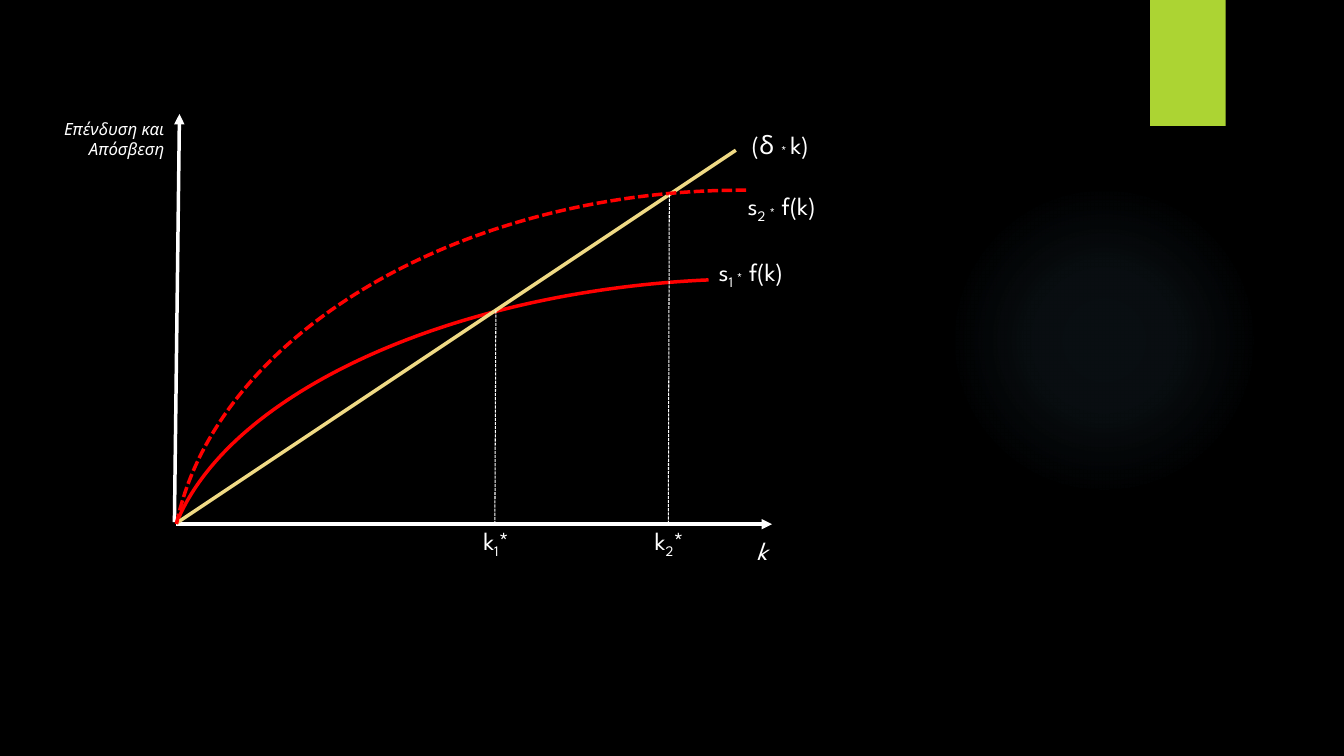
import lxml.etree
import pptx
import pptx.dml.color
import pptx.enum.dml
import pptx.enum.shapes
import pptx.enum.text
import pptx.oxml
import pptx.oxml.ns
import pptx.util

Pt = pptx.util.Pt
RGB = pptx.dml.color.RGBColor.from_string
SHAPE = pptx.enum.shapes.MSO_SHAPE
ALIGN = pptx.enum.text.PP_ALIGN
DASH = pptx.enum.dml.MSO_LINE.SQUARE_DOT
NS = pptx.oxml.ns.nsdecls("a")


class Theme:
    font = "League Spartan"
    background, text, accent, glow = "000000", "FFFFFF", "ACD433", "7AC4F0"
    saving, depreciation = "FF0000", "F0DA85"
    label_size, axis_size = 18, 12
    heavy, thin = 2.5, 0.75


# Content: runs are (text, baseline in percent); boxes are left, top, width, height
SUB, STAR = -25, -10
LABELS = [
    ([("Επένδυση και Απόσβεση", 0)], (17.3, 81.4, 107.3, 36),
     dict(size=Theme.axis_size, align=ALIGN.RIGHT, italic=True)),
    ([("k", 0)], (518.4, 378.7, 36.7, 28.8), dict(align=ALIGN.RIGHT, italic=True)),
    ([("(δ ", 0), ("* ", STAR), ("k) ", 0)], (520.6, 77.8, 77.8, 36),
     dict(align=ALIGN.CENTER, spacing=1.5)),
]
# Each saving rate: index, arc box, arc end, dash, curve label position,
# steady-state line (top point, foot point), steady-state label left
RATES = [
    ("1", (309.6, 7.9, 393.8, 778.3), 1.971, None, (506.2, 179.3),
     ((354.2, 221.8), (353.5, 374.4)), 338.4),
    ("2", (249.8, 8.6, 522.7, 778.3), 5.078, DASH, (527, 132.5),
     ((478.1, 139), (477.4, 373.7)), 460.8),
]
AXES = [((124.6, 373), (128.2, 81.4)), ((126, 374.4), (551.5, 374.4))]
DEPRECIATION = ((126, 373.7), (525.6, 107.3))
ARC_START, ARC_TURN = 166.13, 266.6
STEADY_TOP, LABEL_HEIGHT = 371.5, 28.8
GLOW_BOX, TAB_BOX = (677.5, 131.8, 221.8, 221.8), (821.5, 0, 54, 90)
GLOW_STOPS = [(0, 7), (36, 6), (69, 0)]  # position, opacity in percent


def add_shape(slide, kind, box):
    sp = slide.shapes.add_shape(kind, *map(Pt, box))
    sp.shadow.inherit = False
    sp.line.fill.background()
    return sp


def set_line(line, color, width, dash=None):
    line.color.rgb = RGB(color)
    line.width = Pt(width)
    if dash:
        line.dash_style = dash


def add_line(slide, ends, color, width, dash=None, arrow=False):
    (x1, y1), (x2, y2) = ends
    line = slide.shapes.add_connector(
        pptx.enum.shapes.MSO_CONNECTOR.STRAIGHT, Pt(x1), Pt(y1), Pt(x2), Pt(y2))
    set_line(line.line, color, width, dash)
    if arrow:
        line.line._get_or_add_ln().append(
            pptx.oxml.parse_xml(f'<a:tailEnd {NS} type="triangle"/>'))
    lxml.etree.SubElement(line._element.spPr, pptx.oxml.ns.qn("a:effectLst"))


def add_curve(slide, box, end, dash):
    sp = add_shape(slide, SHAPE.ARC, box)
    sp.fill.background()
    sp.adjustments[0], sp.adjustments[1] = ARC_START, end
    sp.rotation = ARC_TURN
    set_line(sp.line, Theme.saving, Theme.heavy, dash)


def add_label(slide, runs, box, size=Theme.label_size, align=ALIGN.LEFT,
              italic=False, spacing=None):
    tf = slide.shapes.add_textbox(*map(Pt, box)).text_frame
    tf.word_wrap = True
    tf.auto_size = pptx.enum.text.MSO_AUTO_SIZE.SHAPE_TO_FIT_TEXT
    p = tf.paragraphs[0]
    p.alignment, p.line_spacing = align, spacing
    p.font.name, p.font.size, p.font.italic = Theme.font, Pt(size), italic
    p.font.color.rgb = RGB(Theme.text)
    for text, baseline in runs:
        r = p.add_run()
        r.text = text
        if baseline:
            r._r.get_or_add_rPr().set("baseline", str(baseline * 1000))


def add_backdrop(slide):
    slide.background.fill.solid()
    slide.background.fill.fore_color.rgb = RGB(Theme.background)
    # Soft radial glow
    sp = add_shape(slide, SHAPE.OVAL, GLOW_BOX)
    stops = "".join(
        f'<a:gs pos="{pos * 1000}"><a:srgbClr val="{Theme.glow}">'
        f'<a:alpha val="{alpha * 1000}"/></a:srgbClr></a:gs>'
        for pos, alpha in GLOW_STOPS)
    sp._element.spPr.find(pptx.oxml.ns.qn("a:prstGeom")).addnext(pptx.oxml.parse_xml(
        f'<a:gradFill {NS}><a:gsLst>{stops}</a:gsLst><a:path path="circle">'
        '<a:fillToRect l="50000" t="50000" r="50000" b="50000"/></a:path></a:gradFill>'))
    # Corner tab
    sp = add_shape(slide, SHAPE.RECTANGLE, TAB_BOX)
    sp.fill.solid()
    sp.fill.fore_color.rgb = RGB(Theme.accent)


def main():
    prs = pptx.Presentation()
    prs.slide_width, prs.slide_height = Pt(960), Pt(540)
    slide = prs.slides.add_slide(prs.slide_layouts[6])
    add_backdrop(slide)

    # Axes and depreciation line
    for ends in AXES:
        add_line(slide, ends, Theme.text, Theme.heavy, arrow=True)
    solid, dashed = RATES
    add_curve(slide, *solid[1:4])
    add_line(slide, DEPRECIATION, Theme.depreciation, Theme.heavy)
    add_curve(slide, *dashed[1:4])

    # Steady states and labels
    for index, _, _, _, place, drop, left in RATES:
        add_line(slide, drop, Theme.text, Theme.thin, DASH)
        add_label(slide, [("s", 0), (index + " ", SUB), ("*", STAR), (" f(k)", 0)],
                  (*place, 77.8, LABEL_HEIGHT))
        add_label(slide, [("k", 0), (index, SUB), ("*", 0)],
                  (left, STEADY_TOP, 48.2, LABEL_HEIGHT))
    for runs, box, style in LABELS:
        add_label(slide, runs, box, **style)

    prs.save("out.pptx")


if __name__ == "__main__":
    main()
